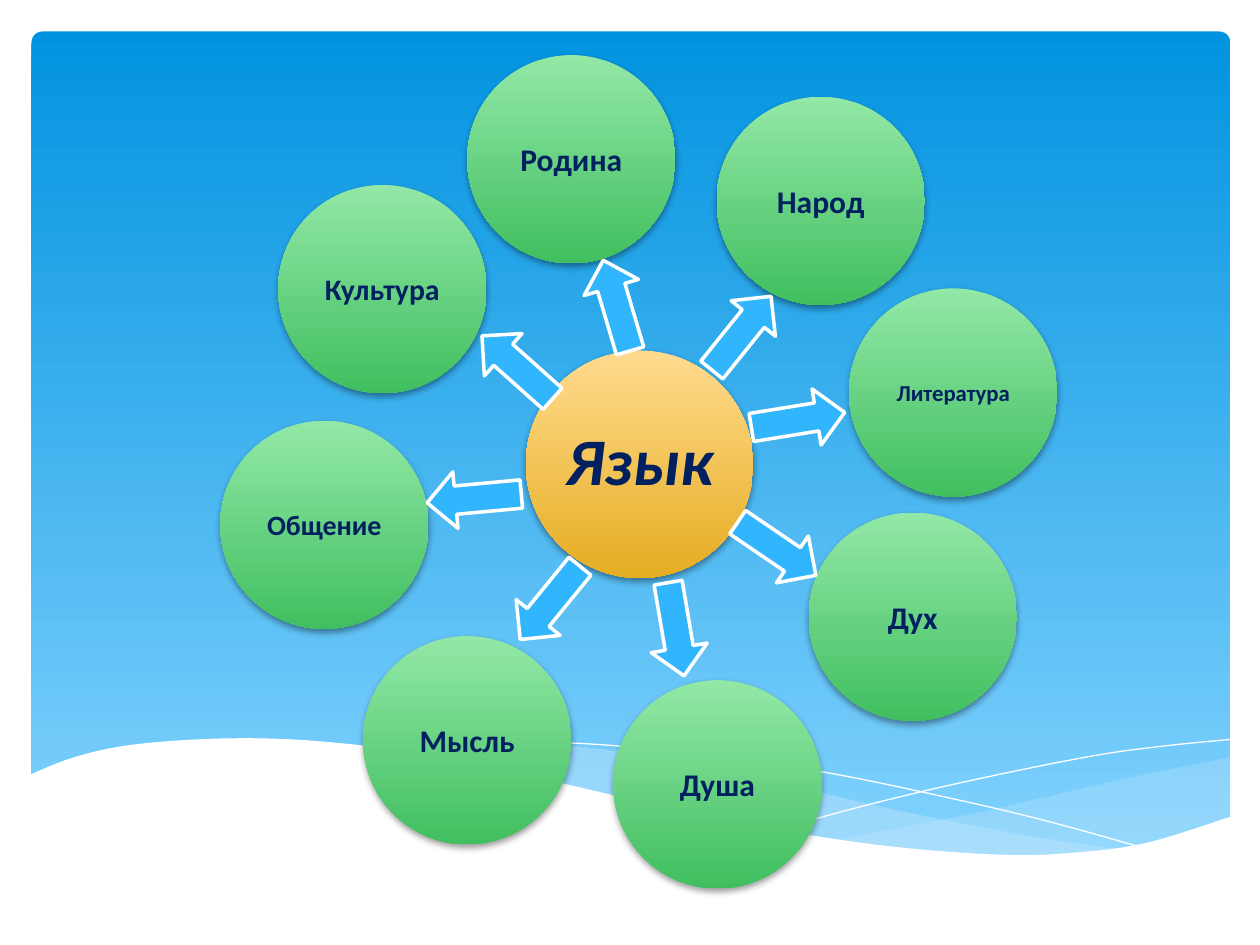
import dataclasses
import lxml.etree
import pptx
import pptx.dml.color
import pptx.enum.shapes
import pptx.enum.text
import pptx.oxml.ns
import pptx.util

Pt = pptx.util.Pt
SHAPE = pptx.enum.shapes.MSO_SHAPE
qn = pptx.oxml.ns.qn


@dataclasses.dataclass(frozen=True)
class Theme:
    font: str = "Calibri"
    ink: str = "002060"
    white: str = "FFFFFF"
    sky: tuple = ("0293E0", "83D3FE")
    mist: str = "C6E7FC"
    gold: tuple = ("FFDB8E", "E6AD22")
    green: tuple = ("92E8A6", "41BF60")
    arrow: str = "31B6FD"
    shadow: str = "000000"
    hub_size: int = 38
    node_size: int = 18


NODES = [
    ("Мысль", 18, (267, 423), (314.3, 344.5), 129.2),
    ("Родина", 18, (326.5, 91), (352.4, 174.6), 253.5),
    ("Литература", 13, (544.7, 224.3), (456, 240), 350.8),
    ("Народ", 18, (469, 114.8), (423.7, 190.4), 308.8),
    ("Общение", 16, (185.4, 299.9), (271, 284.8), 174.7),
    ("Культура", 17, (218.5, 165.2), (295.6, 209.9), 221.7),
    ("Душа", 18, (410, 448.2), (386.3, 359.6), 80.3),
    ("Дух", 18, (521.6, 352.4), (443.9, 313.6), 34.2),
]
RIGHT_WAVE_TOP = [(703.5, 432.7), (653, 442.8), (620.6, 450), (561.6, 463.7), (476.6, 480.2)]
RIGHT_WAVE_BASE = [(476.6, 480.2), (517.7, 485.3), (554.4, 488.9), (594, 488.9),
                   (640.8, 485.3), (674.6, 477.4), (703.5, 467.3)]
LONG_WAVE_TOP = [(643.7, 486), (581.8, 476.6), (509, 462.2), (453.6, 449.3), (399.6, 437),
                 (334.8, 427), (273.6, 422.6), (236.2, 424), (206.6, 427)]
LONG_WAVE_BASE = [(206.6, 427), (261.4, 434.9), (324, 449.3), (381.6, 462.2), (445.7, 475.2),
                  (511.2, 485.3), (565.9, 489.6), (604, 489.6), (643.7, 486)]
FALLING_LINE = [(223.2, 429.8), (254.2, 425.5), (300.2, 424), (352, 426.2), (419, 433.4),
                (479.5, 442.8), (547.9, 457.2), (599, 469.4), (653.8, 484.6)]
RISING_LINE = [(442, 474.5), (501, 458.6), (559.4, 445), (624.2, 432), (666, 426.2), (702.7, 422.6)]
SHORE = [(16.5, 443), (42.5, 432.7), (76, 425.5), (127.5, 422), (180, 423.4), (245, 431.3),
         (322, 447.8), (381, 461.5), (451, 475.2), (510, 483.8), (571, 488.4), (612, 487.4),
         (655, 481.7), (703.5, 466.6)]
SHORE_CORNERS = [(703.5, 526.5), (16.5, 526.5)]


def rgb(value):
    return pptx.dml.color.RGBColor.from_string(value)


def smooth(knots, steps=6):
    ends = [knots[0], *knots, knots[-1]]
    points = [knots[0]]
    for a, b, c, d in zip(ends, ends[1:], ends[2:], ends[3:]):
        for i in range(1, steps + 1):
            t = i / steps
            points.append(tuple(
                q + t * ((r - p) + t * ((2 * p - 5 * q + 4 * r - s) + t * (3 * q - p - 3 * r + s))) / 2
                for p, q, r, s in zip(a, b, c, d)))
    return points


def write(sp, text, *, font, size, color, bold=True, italic=False):
    tf = sp.text_frame
    tf.word_wrap = False
    tf.auto_size = pptx.enum.text.MSO_AUTO_SIZE.NONE
    tf.vertical_anchor = pptx.enum.text.MSO_ANCHOR.MIDDLE
    p = tf.paragraphs[0]
    p.alignment = pptx.enum.text.PP_ALIGN.CENTER
    r = p.add_run()
    r.text = text
    r.font.name, r.font.size = font, Pt(size)
    r.font.bold, r.font.italic = bold, italic
    r.font.color.rgb = rgb(color)


class Deck:
    def __init__(self, theme):
        self.theme = theme
        self.prs = pptx.Presentation()
        self.prs.slide_width, self.prs.slide_height = Pt(720), Pt(540)
        self.s = self.prs.slides.add_slide(self.prs.slide_layouts[5])

    def paint(self, sp, fill=None, line=None, width=0, alpha=None):
        sp.shadow.inherit = False
        if fill is None:
            sp.fill.background()
        elif isinstance(fill, tuple):
            sp.fill.gradient()
            sp.fill.gradient_angle = 270
            for stop, color in zip(sp.fill.gradient_stops, fill):
                stop.color.rgb = rgb(color)
        else:
            sp.fill.solid()
            sp.fill.fore_color.rgb = rgb(fill)
        if alpha is not None:
            clr = next(sp.element.spPr.iter(qn("a:srgbClr")))
            lxml.etree.SubElement(clr, qn("a:alpha"), val=str(alpha * 1000))
        if line is None:
            sp.line.fill.background()
        else:
            sp.line.color.rgb = rgb(line)
            sp.line.width = Pt(width)

    def shape(self, kind, center, size, **look):
        (x, y), (w, h) = center, size
        sp = self.s.shapes.add_shape(kind, Pt(x - w / 2), Pt(y - h / 2), Pt(w), Pt(h))
        self.paint(sp, **look)
        return sp

    def panel(self):
        sp = self.shape(SHAPE.ROUNDED_RECTANGLE, (360.5, 255.5), (685, 475), fill=self.theme.sky)
        sp.adjustments[0] = 0.013

    def curve(self, points, close=True, **look):
        points = [(Pt(x), Pt(y)) for x, y in points]
        builder = self.s.shapes.build_freeform(*points[0])
        builder.add_line_segments(points[1:], close=close)
        self.paint(builder.convert_to_shape(), **look)

    def circle(self, center, diameter, fill):
        sp = self.shape(SHAPE.OVAL, center, (diameter, diameter), fill=fill)
        effects = sp.element.spPr.find(qn("a:effectLst"))
        shadow = lxml.etree.SubElement(effects, qn("a:outerShdw"), blurRad=str(Pt(4)), dist=str(Pt(2)),
                                       dir="5400000", rotWithShape="0")
        clr = lxml.etree.SubElement(shadow, qn("a:srgbClr"), val=self.theme.shadow)
        lxml.etree.SubElement(clr, qn("a:alpha"), val="38000")
        return sp

    def node(self, text, size, center):
        sp = self.circle(center, 119, self.theme.green)
        write(sp, text, font=self.theme.font, size=size, color=self.theme.ink)

    def hub(self, text, center):
        self.circle(center, 130, self.theme.gold)
        sp = self.s.shapes.title
        sp.element.getparent().append(sp.element)
        side = 92
        sp.left, sp.top = Pt(center[0] - side / 2), Pt(center[1] - side / 2)
        sp.width = sp.height = Pt(side)
        tf = sp.text_frame
        tf.margin_left = tf.margin_right = tf.margin_top = tf.margin_bottom = Pt(3.6)
        tf.paragraphs[0].line_spacing = 0.9
        write(sp, text, font=self.theme.font, size=self.theme.hub_size, color=self.theme.ink, italic=True)

    def arrow(self, center, angle):
        sp = self.shape(SHAPE.RIGHT_ARROW, center, (54, 32.4), fill=self.theme.arrow,
                        line=self.theme.white, width=2)
        sp.rotation = angle


def main():
    theme = Theme()
    deck = Deck(theme)
    deck.panel()
    deck.curve(smooth(RIGHT_WAVE_TOP) + smooth(RIGHT_WAVE_BASE), fill=theme.mist, alpha=29)
    deck.curve(smooth(LONG_WAVE_TOP) + smooth(LONG_WAVE_BASE), fill=theme.mist, alpha=40)
    for knots in (FALLING_LINE, RISING_LINE):
        deck.curve(smooth(knots), close=False, line=theme.white)
    deck.curve(smooth(SHORE) + SHORE_CORNERS, fill=theme.white)
    deck.hub("Язык", (365.5, 265.3))
    for text, size, center, _, _ in NODES:
        deck.node(text, size, center)
    for _, _, _, center, angle in NODES:
        deck.arrow(center, angle)
    deck.prs.save("out.pptx")


if __name__ == "__main__":
    main()
